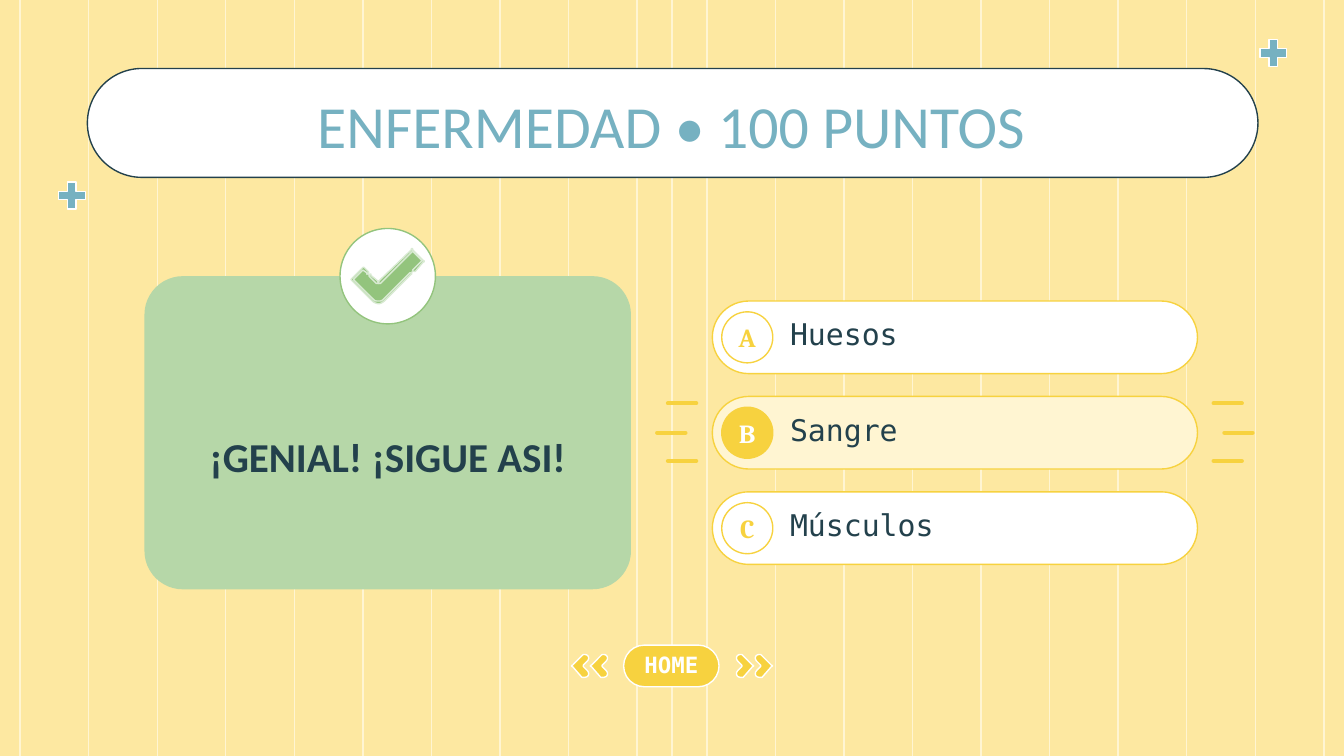
"""Build the quiz answer slide."""
from dataclasses import dataclass

from lxml.etree import SubElement
from pptx import Presentation
from pptx.dml.color import RGBColor as Color
from pptx.enum.shapes import MSO_CONNECTOR as Connector, MSO_SHAPE as Shape
from pptx.enum.text import MSO_ANCHOR as Anchor, PP_ALIGN as Align
from pptx.oxml.ns import qn
from pptx.util import Inches, Pt


@dataclass(frozen=True)
class Theme:
    """Colours, fonts and sizes of the slide."""
    sand: str = "FDE8A1"
    cream: str = "FFF5D2"
    yellow: str = "F7D23F"
    white: str = "FFFFFF"
    ink: str = "23414C"
    blue: str = "76B1C1"
    mint: str = "B6D7A8"
    green: str = "93C47D"
    pale_green: str = "D9EAD3"
    sans: str = "Calibri"
    serif: str = "Cambria"
    mono: str = "DejaVu Sans Mono"
    title_size: int = 32
    message_size: int = 22
    answer_size: int = 16
    badge_size: int = 14
    button_size: int = 12
    thin: float = 0.75
    thick: float = 2.25


THEME = Theme()
WIDTH = 10
HEIGHT = WIDTH * 9 / 16

TICK = [
    [(3.07, 1.86), (2.83, 2.1), (2.83, 2.1, 2.82, 2.11, 2.82, 2.11),
     (2.81, 2.11, 2.81, 2.1, 2.81, 2.1), (2.7, 2), (2.62, 2.08), (2.78, 2.23),
     (2.79, 2.24, 2.8, 2.25, 2.82, 2.25), (2.83, 2.25, 2.85, 2.24, 2.86, 2.23),
     (3.15, 1.94)],
    [(2.7, 1.99), (2.62, 2.07), (2.61, 2.08, 2.61, 2.08, 2.62, 2.09), (2.77, 2.24),
     (2.78, 2.25, 2.8, 2.26, 2.82, 2.26), (2.83, 2.26, 2.85, 2.25, 2.86, 2.24),
     (3.06, 2.04), (3.07, 2.04, 3.06, 2.03, 3.06, 2.03),
     (3.05, 2.03, 3.05, 2.03, 3.05, 2.03), (2.85, 2.23),
     (2.84, 2.24, 2.83, 2.24, 2.82, 2.24), (2.8, 2.24, 2.79, 2.24, 2.78, 2.23),
     (2.63, 2.08), (2.7, 2.01), (2.73, 2.03), (2.73, 2.04, 2.73, 2.04, 2.73, 2.04),
     (2.74, 2.04, 2.75, 2.03, 2.74, 2.02), (2.71, 1.99)],
    [(3.07, 1.85), (3.06, 1.85, 3.06, 1.85, 3.06, 1.86), (2.82, 2.09),
     (2.82, 2.1, 2.82, 2.1, 2.82, 2.1), (2.81, 2.1, 2.81, 2.1, 2.81, 2.09),
     (2.76, 2.05), (2.76, 2.04, 2.76, 2.04, 2.76, 2.04),
     (2.75, 2.04, 2.74, 2.05, 2.75, 2.06), (2.8, 2.11),
     (2.8, 2.11, 2.81, 2.11, 2.82, 2.11), (2.82, 2.11, 2.83, 2.11, 2.83, 2.11),
     (3.07, 1.87), (3.14, 1.94), (3.07, 2.01), (3.07, 2.01, 3.07, 2.02, 3.08, 2.02),
     (3.08, 2.02, 3.08, 2.02, 3.09, 2.02), (3.15, 1.95),
     (3.16, 1.95, 3.16, 1.94, 3.15, 1.94), (3.07, 1.86)],
]
CHEVRON = [
    (5.51, 4.87), (5.48, 4.87, 5.47, 4.9, 5.49, 4.92), (5.52, 4.95),
    (5.52, 4.95, 5.52, 4.96, 5.52, 4.96), (5.49, 4.99),
    (5.47, 5.01, 5.48, 5.04, 5.51, 5.04), (5.52, 5.04, 5.52, 5.04, 5.53, 5.04),
    (5.6, 4.96), (5.61, 4.96, 5.61, 4.95, 5.6, 4.95), (5.53, 4.88),
    (5.52, 4.87, 5.52, 4.87, 5.51, 4.87),
]


def apply_format(target, values):
    """Set each named value on the target."""
    for name, value in values.items():
        setattr(target, name, value)


def paint(shape, fill, line):
    """Give a shape a flat fill and a thin outline."""
    shape.shadow.inherit = False
    shape.fill.solid()
    shape.fill.fore_color.rgb = Color.from_string(fill)
    shape.line.color.rgb = Color.from_string(line)
    shape.line.width = Pt(THEME.thin)


def add_box(page, kind, bounds, fill, line, adjust=None):
    """Add a painted preset shape."""
    box = page.shapes.add_shape(kind, *map(Inches, bounds))
    if adjust is not None:
        box.adjustments[0] = adjust
    paint(box, fill, line)
    return box


def write(box, text, font, size, color, insets, bold=False,
          align=Align.CENTER, anchor=Anchor.MIDDLE):
    """Write one formatted line of text in a box."""
    frame = box.text_frame
    sides = ("margin_left", "margin_top", "margin_right", "margin_bottom")
    apply_format(frame, dict(zip(sides, map(Inches, insets))))
    apply_format(frame, {"word_wrap": True, "vertical_anchor": anchor})
    para = frame.paragraphs[0]
    para.alignment = align
    span = para.add_run()
    span.text = text
    apply_format(span.font, {"name": font, "size": Pt(size), "bold": bold})
    span.font.color.rgb = Color.from_string(color)


def add_line(page, start, end, color, width, cap="flat"):
    """Add a straight line without a shadow."""
    line = page.shapes.add_connector(Connector.STRAIGHT, *map(Inches, start + end))
    line.line.color.rgb = Color.from_string(color)
    line.line.width = Pt(width)
    properties = line._element.spPr
    properties.find(qn("a:ln")).set("cap", cap)
    SubElement(properties, qn("a:effectLst"))


def flatten(outline, steps=6):
    """Turn corners and cubic curves into a list of points."""
    points = []
    for part in outline:
        if len(part) == 2:
            points.append(part)
            continue
        knots = (points[-1], part[:2], part[2:4], part[4:])
        for step in range(1, steps + 1):
            t = step / steps
            weights = ((1 - t) ** 3, 3 * t * (1 - t) ** 2, 3 * t * t * (1 - t), t ** 3)
            points.append(tuple(sum(weight * knot[axis] for weight, knot in zip(weights, knots))
                                for axis in (0, 1)))
    return points


def add_outline(page, points, fill, line):
    """Add a closed freeform through the points."""
    corners = [(Inches(x), Inches(y)) for x, y in points]
    builder = page.shapes.build_freeform(*corners[0], scale=1.0)
    builder.add_line_segments(corners[1:], close=True)
    paint(builder.convert_to_shape(), fill, line)


def add_backdrop(page):
    """Add the background colour and its stripes."""
    page.background.fill.solid()
    page.background.fill.fore_color.rgb = Color.from_string(THEME.sand)
    left = [0.15 + 0.51 * index for index in range(10)]
    for x in left + [WIDTH / 2] + [WIDTH - x for x in left]:
        add_line(page, (x, 0), (x, HEIGHT), THEME.cream, THEME.thin)


def add_title(page):
    """Add the title pill with its two plus signs."""
    add_box(page, Shape.ROUNDED_RECTANGLE, (0.65, 0.51, 8.71, 0.81), THEME.white, THEME.ink, 0.5)
    for x, y in ((0.4, 1.32), (9.34, 0.26)):
        add_box(page, Shape.MATH_PLUS, (x, y, 0.27, 0.27), THEME.blue, THEME.white, 0.235)
    box = page.shapes.add_textbox(*map(Inches, (1.31, 0.56, 7.37, 0.65)))
    write(box, "ENFERMEDAD • 100 PUNTOS", THEME.sans, THEME.title_size, THEME.blue,
          (0.1, 0.1, 0.1, 0.1), anchor=Anchor.TOP)


def add_answer(page, top, letter, text, correct):
    """Add an answer pill with its letter badge."""
    pill = add_box(page, Shape.ROUNDED_RECTANGLE, (5.3, top, 3.61, 0.54),
                   THEME.cream if correct else THEME.white, THEME.yellow, 0.5)
    write(pill, text, THEME.mono, THEME.answer_size, THEME.ink,
          (0.5, 0.05, 0.1, 0.1), align=Align.LEFT)
    fill, color = (THEME.yellow, THEME.white) if correct else (THEME.white, THEME.yellow)
    badge = add_box(page, Shape.OVAL, (5.37, top + 0.08, 0.38, 0.38), fill, THEME.yellow)
    write(badge, letter, THEME.serif, THEME.badge_size, color, (0, 0.1, 0, 0.1), bold=True)


def add_rays(page):
    """Add the dashes on both sides of the correct answer."""
    for y, x in ((3, 4.97), (3.22, 4.89), (3.43, 4.97)):
        for start, end in ((x, x + 0.21), (14.21 - x, 14 - x)):
            add_line(page, (start, y), (end, y), THEME.yellow, THEME.thick, "rnd")


def add_message(page):
    """Add the praise card with its tick."""
    card = add_box(page, Shape.ROUNDED_RECTANGLE, (1.08, 2.06, 3.61, 2.32),
                   THEME.mint, THEME.mint, 0.121)
    write(card, "¡GENIAL! ¡SIGUE ASI!", THEME.sans, THEME.message_size, THEME.ink,
          (0.3, 0.45, 0.3, 0.1), bold=True)
    add_box(page, Shape.OVAL, (2.53, 1.7, 0.71, 0.71), THEME.white, THEME.green)
    for outline in TICK:
        add_outline(page, flatten(outline), THEME.green, THEME.pale_green)


def add_navigation(page):
    """Add the home button between double chevrons."""
    button = add_box(page, Shape.ROUNDED_RECTANGLE, (4.64, 4.8, 0.71, 0.31),
                     THEME.yellow, THEME.white, 0.5)
    write(button, "HOME", THEME.mono, THEME.button_size, THEME.white,
          (0.1, 0.08, 0.1, 0.1), bold=True)
    for shift in (0, 0.14):
        right = [(x + shift, y) for x, y in flatten(CHEVRON)]
        for points in (right, [(WIDTH - x, y) for x, y in right]):
            add_outline(page, points, THEME.yellow, THEME.white)


def main():
    """Build and save the deck."""
    deck = Presentation()
    apply_format(deck, {"slide_width": Inches(WIDTH), "slide_height": Inches(HEIGHT)})
    page = deck.slides.add_slide(deck.slide_layouts[6])
    add_backdrop(page)
    add_title(page)
    for index, (letter, text) in enumerate(zip("ABC", ("Huesos", "Sangre", "Músculos"))):
        add_answer(page, 2.24 + 0.71 * index, letter, text, letter == "B")
    add_rays(page)
    add_message(page)
    add_navigation(page)
    deck.save("out.pptx")


if __name__ == "__main__":
    main()
